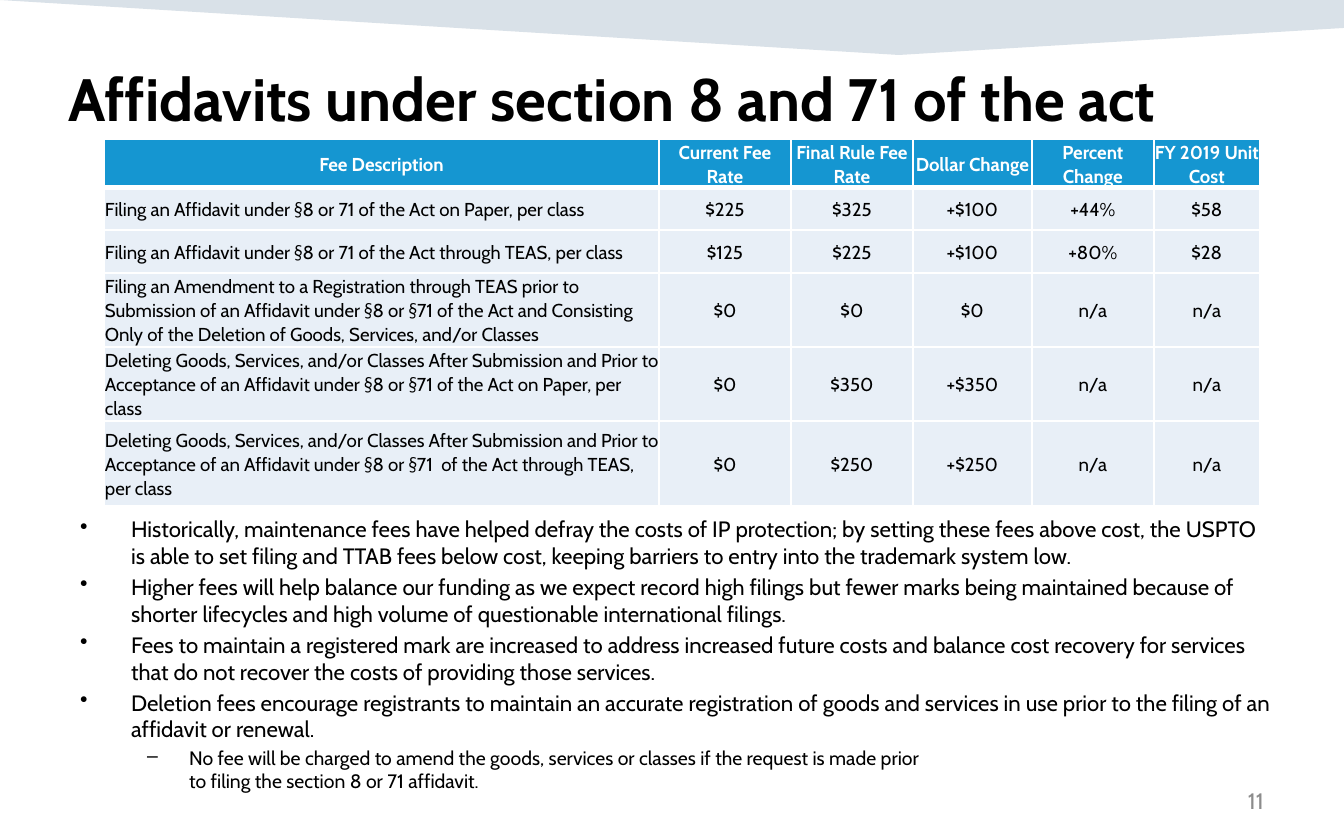
from lxml import etree
from pptx import Presentation
from pptx import util as u
from pptx.dml.color import RGBColor
from pptx.enum import text
from pptx.oxml import ns

SCALE = 914400 / 134.4  # EMU in one px
BLACK = RGBColor(0x00, 0x00, 0x00)
WHITE = RGBColor(0xFF, 0xFF, 0xFF)
NAVY = RGBColor(0x00, 0x38, 0x65)
BLUE = RGBColor(0x15, 0x96, 0xD1)
PALE = RGBColor(0xE8, 0xEF, 0xF7)
GREY = RGBColor(0x8C, 0x8C, 0x8C)


def px(*vals):
    return [u.Emu(round(v * SCALE)) for v in vals]


def style(par, size, color, bold=False):
    font = par.font
    font.name, font.size, font.bold = "Cabin", u.Pt(size), bold
    font.color.rgb = color


prs = Presentation()
prs.slide_width, prs.slide_height = px(1344, 840)
slide = prs.slides.add_slide(prs.slide_layouts[6])

# Band along the top
path = slide.shapes.build_freeform(0, 0, scale=SCALE)
path.add_line_segments([(1344, 0), (1344, 28), (899, 55)], close=True)
band = path.convert_to_shape()
band.shadow.inherit = False
band.line.fill.background()
band.fill.solid()
band.fill.fore_color.rgb = NAVY
tint = band.fill._xPr.find(".//" + ns.qn("a:srgbClr"))
etree.SubElement(tint, ns.qn("a:alpha"), val="15000")

# Title
frame = slide.shapes.add_textbox(*px(55, 55, 1262, 130)).text_frame
frame.word_wrap = True
frame.text = "Affidavits under section 8 and 71 of the act"
style(frame.paragraphs[0], 32, BLACK, True)

# Bullets
points = [
    "Historically, maintenance fees have helped defray the costs of IP protection; by setting these fees above cost, the USPTO is able to set filing and TTAB fees below cost, keeping barriers to entry into the trademark system low.",
    "Higher fees will help balance our funding as we expect record high filings but fewer marks being maintained because of shorter lifecycles and high volume of questionable international filings.",
    "Fees to maintain a registered mark are increased to address increased future costs and balance cost recovery for services that do not recover the costs of providing those services.",
    "Deletion fees encourage registrants to maintain an accurate registration of goods and services in use prior to the filing of an affidavit or renewal.",
    "No fee will be charged to amend the goods, services or classes if the request is made prior\vto filing the section 8 or 71 affidavit.",
]
frame = slide.shapes.add_textbox(*px(67, 509, 1219, 280)).text_frame
frame.word_wrap = True
for i, words in enumerate(points):
    sub = i == len(points) - 1
    mark, left, hang, size = ("–", 109, 42, 10.4) if sub else ("•", 51, 51, 11.9)
    par = frame.add_paragraph() if i else frame.paragraphs[0]
    par.text = words
    if i:
        par.space_before = u.Pt(round(size / 5, 1))
    props = par._p.get_or_add_pPr()
    props.set("marL", str(px(left)[0]))
    props.set("indent", str(px(-hang)[0]))
    etree.SubElement(props, ns.qn("a:buChar"), char=mark)
    style(par, size, BLACK)

# Fee table
rows = [
    ("Fee Description", "Current Fee Rate", "Final Rule Fee Rate",
     "Dollar Change", "Percent Change", "FY 2019 Unit Cost"),
    ("Filing an Affidavit under §8 or 71 of the Act on Paper, per class",
     "$225", "$325", "+$100", "+44%", "$58"),
    ("Filing an Affidavit under §8 or 71 of the Act through TEAS, per class",
     "$125", "$225", "+$100", "+80%", "$28"),
    ("Filing an Amendment to a Registration through TEAS prior to Submission of an Affidavit under §8 or §71 of the Act and Consisting Only of the Deletion of Goods, Services, and/or Classes",
     "$0", "$0", "$0", "n/a", "n/a"),
    ("Deleting Goods, Services, and/or Classes After Submission and Prior to Acceptance of an Affidavit under §8 or §71 of the Act on Paper, per class",
     "$0", "$350", "+$350", "n/a", "n/a"),
    ("Deleting Goods, Services, and/or Classes After Submission and Prior to Acceptance of an Affidavit under §8 or §71  of the Act through TEAS, per class",
     "$0", "$250", "+$250", "n/a", "n/a"),
]
wide = [555, 132, 122, 119, 122, 106]
high = [48, 42, 43, 74, 74, 85]
table = slide.shapes.add_table(
    len(rows), len(wide), *px(104, 139, sum(wide), sum(high))).table
table.horz_banding = False
for col, size in zip(table.columns, px(*wide)):
    col.width = size
for row, size in zip(table.rows, px(*high)):
    row.height = size

for r, row in enumerate(rows):
    head = r == 0
    for c, words in enumerate(row):
        cell = table.cell(r, c)
        cell.text = words
        cell.vertical_anchor = text.MSO_ANCHOR.MIDDLE
        cell.margin_left, cell.margin_right, cell.margin_top, cell.margin_bottom = px(1, 1, 1, 0)
        cell.fill.solid()
        cell.fill.fore_color.rgb = BLUE if head else PALE
        par = cell.text_frame.paragraphs[0]
        par.alignment = text.PP_ALIGN.CENTER if head or c else text.PP_ALIGN.LEFT
        par.line_spacing = 1.07
        par.space_after = u.Pt(8)
        style(par, 10, WHITE if head else BLACK, head)
        # White borders, thicker under the header
        props = cell._tc.get_or_add_tcPr()
        for i, side in enumerate("LRTB"):
            thick = (r, side) in [(0, "B"), (1, "T")]
            line = etree.Element(ns.qn("a:ln" + side), w=str(u.Pt(3 if thick else 1)))
            fill = etree.SubElement(line, ns.qn("a:solidFill"))
            etree.SubElement(fill, ns.qn("a:srgbClr"), val=str(WHITE))
            props.insert(i, line)

# Page number
frame = slide.shapes.add_textbox(*px(964, 778, 313, 45)).text_frame
frame.word_wrap = True
frame.vertical_anchor = text.MSO_ANCHOR.MIDDLE
frame.text = "11"
par = frame.paragraphs[0]
par.alignment = text.PP_ALIGN.RIGHT
style(par, 12, GREY)

prs.save("out.pptx")
